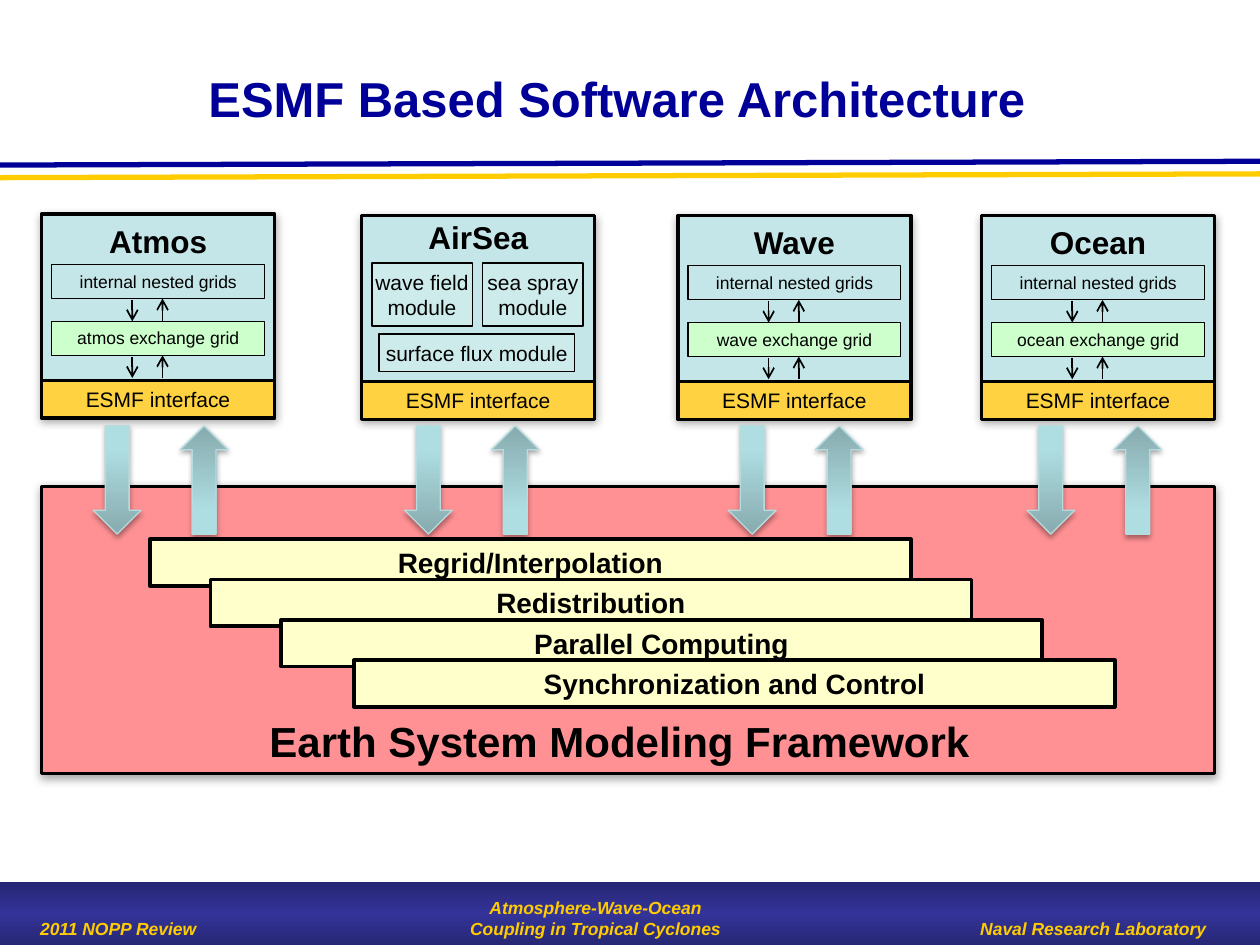
"""Build the ESMF software architecture slide."""
from copy import deepcopy
from lxml import etree
from pptx import Presentation
from pptx.dml.color import RGBColor
from pptx.enum.shapes import MSO_CONNECTOR, MSO_SHAPE
from pptx.enum.text import MSO_ANCHOR, PP_ALIGN
from pptx.oxml.ns import qn
from pptx.util import Inches, Pt

RECT, DOWN = MSO_SHAPE.RECTANGLE, MSO_SHAPE.DOWN_ARROW
STRAIGHT = MSO_CONNECTOR.STRAIGHT
TOP, MIDDLE = MSO_ANCHOR.TOP, MSO_ANCHOR.MIDDLE
LEFT, CENTER = PP_ALIGN.LEFT, PP_ALIGN.CENTER
rgb = RGBColor.from_string


def box(parent, x, y, w, h, text="", shape=RECT, fill=None, line=None, width=2, shadow=None,
        size=12, bold=False, italic=False, color="000000", align=CENTER, anchor=TOP,
        inset=0.1, wrap=True):
    at = [Inches(v) for v in (x, y, w, h)]
    if fill:
        s = parent.shapes.add_shape(shape, *at)
        s.shadow.inherit = False
        if isinstance(fill, str):
            s.fill.solid()
            s.fill.fore_color.rgb = rgb(fill)
        else:
            s.fill.gradient()
            s.fill.gradient_angle = 90
            stops = s._element.spPr.find(".//" + qn("a:gsLst"))
            stops.append(deepcopy(stops[0]))
            for stop, (position, c) in zip(s.fill.gradient_stops, fill):
                stop.position = position
                stop.color.rgb = rgb(c)
        if line:
            s.line.color.rgb = rgb(line)
            s.line.width = Pt(width)
        else:
            s.line.fill.background()
        if shadow:
            effects = s._element.spPr.find(qn("a:effectLst"))
            outer = etree.SubElement(effects, qn("a:outerShdw"), blurRad=str(Pt(shadow)),
                                     dist=str(Pt(1.8)), dir="5400000", rotWithShape="0")
            black = etree.SubElement(outer, qn("a:srgbClr"), val="000000")
            etree.SubElement(black, qn("a:alpha"), val="35000")
    else:
        s = parent.shapes.add_textbox(*at)
    if text:
        tf = s.text_frame
        tf.word_wrap = wrap
        tf.vertical_anchor = anchor
        tf.margin_left = tf.margin_right = Inches(inset)
        p = tf.paragraphs[0]
        p.alignment = align
        r = p.add_run()
        r.text = text
        r.font.name, r.font.size = "Arial", Pt(size)
        r.font.bold, r.font.italic = bold, italic
        r.font.color.rgb = rgb(color)
    return s


def connect(parent, x1, y1, x2, y2, color="000000", width=1, arrow=False):
    c = parent.shapes.add_connector(STRAIGHT, *[Inches(v) for v in (x1, y1, x2, y2)])
    c.line.color.rgb = rgb(color)
    c.line.width = Pt(width)
    if arrow:
        etree.SubElement(c.line._get_or_add_ln(), qn("a:tailEnd"), type="arrow")
    etree.SubElement(c._element.spPr, qn("a:effectLst"))


prs = Presentation()
prs.slide_width, prs.slide_height = Inches(10), Inches(7.5)
slide = prs.slides.add_slide(prs.slide_layouts[5])

footer = dict(size=10, bold=True, italic=True, color="FFCC00")
box(slide, 0, 7, 10, 0.5, fill=[(0, "272775"), (0.5, "333399"), (1, "272775")])
box(slide, 0.22, 7.24, 2.33, 0.26, "2011 NOPP Review", align=LEFT, **footer)
box(slide, 7.35, 7.24, 2.65, 0.26, "Naval Research Laboratory", **footer)
box(slide, 3.47, 7.07, 2.51, 0.43, "Atmosphere-Wave-Ocean Coupling in Tropical Cyclones",
    anchor=MIDDLE, **footer)

title = slide.shapes.title
title.left, title.top = Inches(1.2), Inches(0.26)
title.width, title.height = Inches(7.39), Inches(1.03)
tf = title.text_frame
tf.vertical_anchor = MIDDLE
p = tf.paragraphs[0]
p.alignment = CENTER
r = p.add_run()
r.text = "ESMF Based Software Architecture"
r.font.name, r.font.size, r.font.bold = "Arial", Pt(28), True
r.font.color.rgb = rgb("000099")
connect(slide, 0, 1.31, 10, 1.28, "000099", 3)
connect(slide, 0, 1.41, 10, 1.38, "FFCC00", 3)

box(slide, 0.33, 3.86, 9.31, 2.28, fill="FF9194", line="000000", shadow=5)

components = [("Atmos", 0.33, 1.7, 0.74), ("AirSea", 2.87, 1.71, 3.21),
              ("Wave", 5.38, 1.71, 5.78), ("Ocean", 7.79, 1.71, 8.15)]
airsea_modules = [("wave field module", 0.08, 0.38, 0.8, 0.5),
                  ("sea spray module", 0.96, 0.38, 0.8, 0.5),
                  ("surface flux module", 0.14, 0.94, 1.55, 0.3)]
exchange_gradient = [(0, "87ABAE"), (0.8, "AFDEE2"), (1, "AFE0E4")]

for name, x, y, arrow_x in components:
    group = slide.shapes.add_group_shape()
    box(group, x, y, 1.85, 1.61, fill="C5E6E8", line="000000", shadow=5)
    heading_y = y - 0.03 if name == "AirSea" else y + 0.01
    box(group, x, heading_y, 1.85, 0.4, name, size=18, bold=True)
    box(group, x, y + 1.32, 1.85, 0.3, "ESMF interface", fill="FFD241", line="000000")
    if name == "AirSea":
        for text, dx, dy, w, h in airsea_modules:
            box(group, x + dx, y + dy, w, h, text, fill="CEEBEC", line="000000", width=1,
                inset=0)
    else:
        grids = [("internal nested grids", 0.4, "C5E6E8"),
                 (f"{name.lower()} exchange grid", 0.85, "CCFFCC")]
        for text, dy, fill in grids:
            box(group, x + 0.08, y + dy, 1.69, 0.27, text, fill=fill, line="000000",
                width=0.75, size=10)
            connect(group, x + 0.72, y + dy + 0.28, x + 0.72, y + dy + 0.45, arrow=True)
            connect(group, x + 0.96, y + dy + 0.45, x + 0.96, y + dy + 0.27, arrow=True)
    for dx in (0, 0.69):
        s = box(slide, arrow_x + dx, 3.38, 0.38, 0.86, shape=DOWN, fill=exchange_gradient,
                line="B6DCDF", width=0.75, shadow=3.1)
        if dx:
            s._element.spPr.xfrm.set("flipV", "1")

services = [("Regrid/Interpolation", 1.19), ("Redistribution", 1.67),
            ("Parallel Computing", 2.23), ("Synchronization and Control", 2.81)]
group = slide.shapes.add_group_shape()
for i, (text, x) in enumerate(services):
    box(group, x, 4.28 + 0.32 * i, 6.04, 0.37, text, fill="FFFFCC", line="000000", size=16,
        bold=True)
box(slide, 2.04, 5.63, 5.81, 0.51, "Earth System Modeling Framework", size=24, bold=True,
    align=LEFT, wrap=False)

prs.save("out.pptx")
